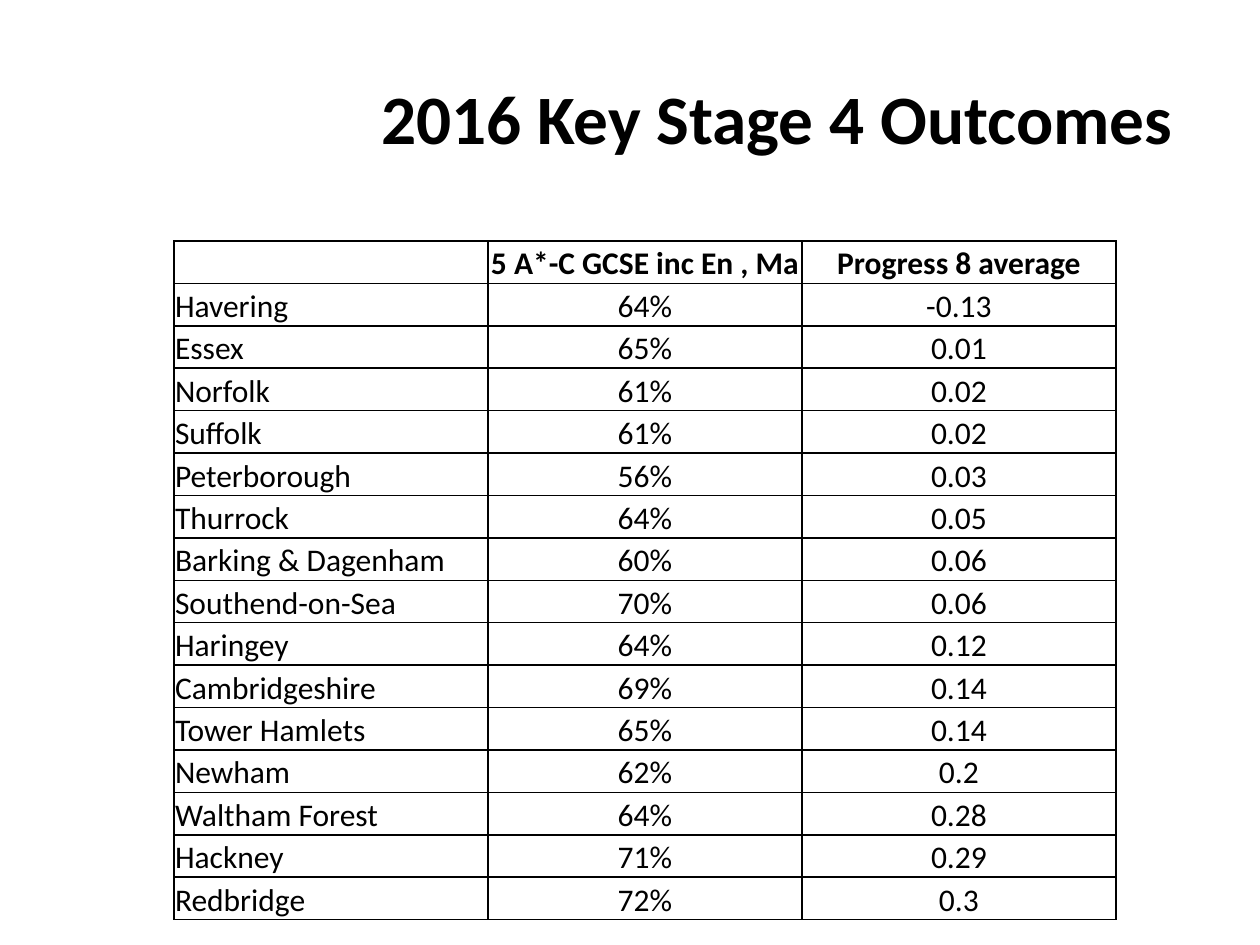
import pptx
import pptx.util
import pptx.dml.color
import pptx.enum.text
import pptx.oxml
import pptx.oxml.ns

PX = 914400 / 126
THEME = {
    "font": "Calibri",
    "ink": "000000",
    "title": 39.6,
    "body": 18,
    "line": 1,
}
ALIGN = pptx.enum.text.PP_ALIGN
ANCHOR = pptx.enum.text.MSO_ANCHOR


def px(num):
    return pptx.util.Emu(round(num * PX))


def style(para, size, bold, align):
    para.alignment = align
    para.font.name = THEME["font"]
    para.font.size = pptx.util.Pt(size)
    para.font.bold = bold
    para.font.color.rgb = pptx.dml.color.RGBColor.from_string(THEME["ink"])


deck = pptx.Presentation()
deck.slide_width, deck.slide_height = px(1260), px(945)
slide = deck.slides.add_slide(deck.slide_layouts[6])

title = slide.shapes.add_textbox(px(357), px(38), px(840), px(157)).text_frame
title.word_wrap = True
title.vertical_anchor = ANCHOR.MIDDLE
title.text = "2016 Key Stage 4 Outcomes"
style(title.paragraphs[0], THEME["title"], True, ALIGN.CENTER)

rows = [
    ("", "5 A*-C GCSE inc En , Ma", "Progress 8 average"),
    ("Havering", "64%", "-0.13"),
    ("Essex", "65%", "0.01"),
    ("Norfolk", "61%", "0.02"),
    ("Suffolk", "61%", "0.02"),
    ("Peterborough", "56%", "0.03"),
    ("Thurrock", "64%", "0.05"),
    ("Barking & Dagenham", "60%", "0.06"),
    ("Southend-on-Sea", "70%", "0.06"),
    ("Haringey", "64%", "0.12"),
    ("Cambridgeshire", "69%", "0.14"),
    ("Tower Hamlets", "65%", "0.14"),
    ("Newham", "62%", "0.2"),
    ("Waltham Forest", "64%", "0.28"),
    ("Hackney", "71%", "0.29"),
    ("Redbridge", "72%", "0.3"),
]
table = slide.shapes.add_table(
    len(rows), len(rows[0]), px(174), px(241), px(942), px(679)
).table
table.first_row = False
table.horz_banding = False

for r, row in enumerate(rows):
    for c, text in enumerate(row):
        cell = table.cell(r, c)
        cell.text = text
        cell.vertical_anchor = ANCHOR.BOTTOM
        cell.margin_left = cell.margin_right = cell.margin_top = px(1)
        cell.margin_bottom = 0
        align = ALIGN.CENTER if c else ALIGN.LEFT
        style(cell.text_frame.paragraphs[0], THEME["body"], r == 0, align)
        props = cell._tc.get_or_add_tcPr()
        for side in "LRTB":
            props.append(pptx.oxml.parse_xml(
                f'<a:ln{side} {pptx.oxml.ns.nsdecls("a")}'
                f' w="{pptx.util.Pt(THEME["line"])}"><a:solidFill>'
                f'<a:srgbClr val="{THEME["ink"]}"/></a:solidFill></a:ln{side}>'
            ))
        cell.fill.background()

deck.save("out.pptx")
